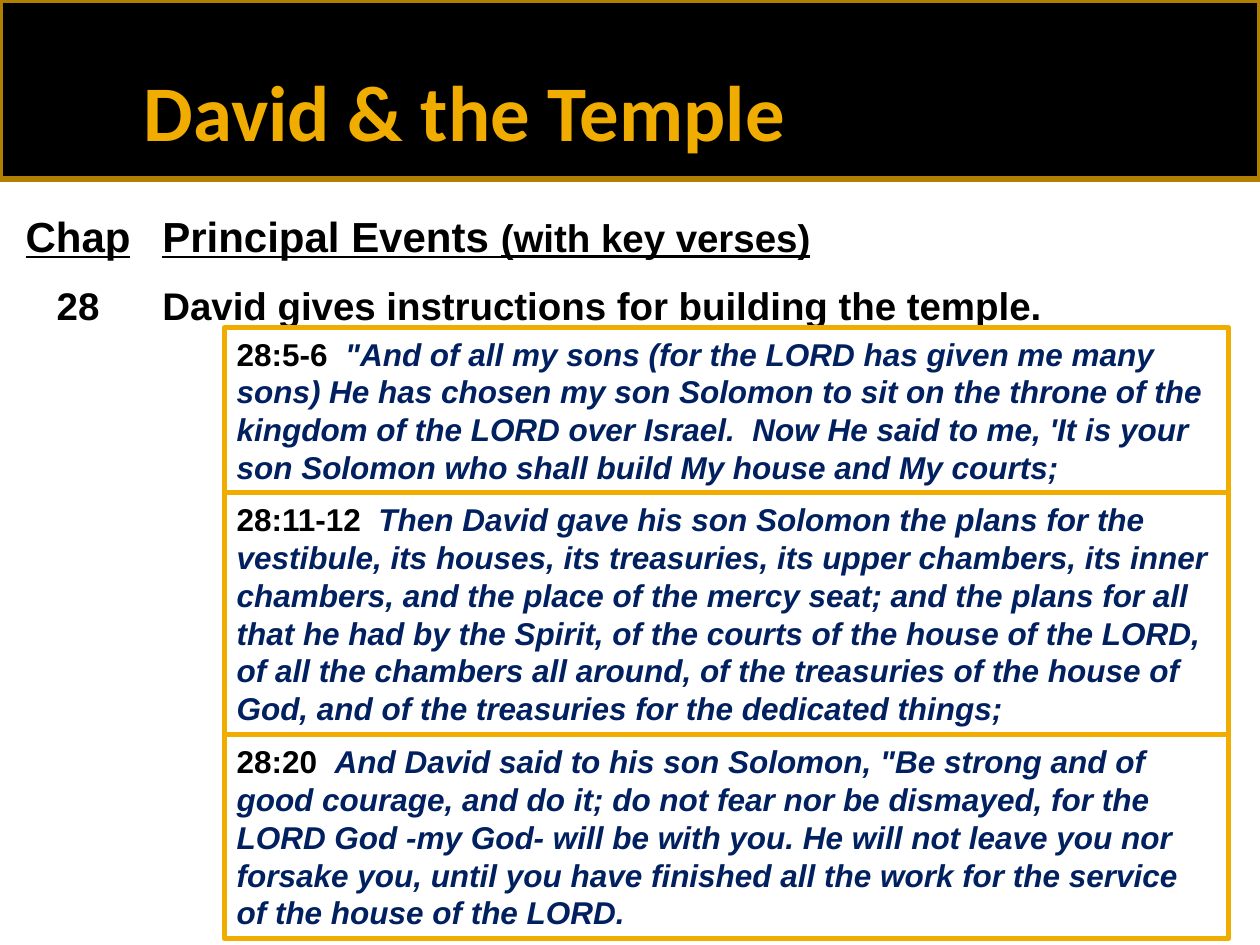
from pptx import Presentation
from pptx.dml.color import RGBColor
from pptx.enum.shapes import MSO_SHAPE
from pptx.enum.text import MSO_ANCHOR, MSO_AUTO_SIZE, PP_ALIGN
from pptx.util import Inches, Pt

COLORS = {"black": "000000", "gold": "F0AD00", "bronze": "B28000", "navy": "002060"}

TITLE = "David & the Temple"

# Each column: left, width, alignment, paragraphs of (text, size, underlined) spans
COLUMNS = [
    (0.05, 1.14, PP_ALIGN.CENTER, [
        [("Chap", 24, True)],
        [("28", 22, False)],
    ]),
    (1.19, 8.68, PP_ALIGN.LEFT, [
        [("Principal Events ", 24, True), ("(with key verses)", 22, True)],
        [("David gives instructions for building the temple.", 22, False)],
    ]),
]

# Each verse: reference, words, box height
VERSES = [
    ("28:5-6", "\"And of all my sons (for the LORD has given me many sons) He has "
     "chosen my son Solomon to sit on the throne of the kingdom of the LORD over "
     "Israel.  Now He said to me, 'It is your son Solomon who shall build My house "
     "and My courts;", 1.31),
    ("28:11-12", "Then David gave his son Solomon the plans for the vestibule, its "
     "houses, its treasuries, its upper chambers, its inner chambers, and the place "
     "of the mercy seat; and the plans for all that he had by the Spirit, of the "
     "courts of the house of the LORD, of all the chambers all around, of the "
     "treasuries of the house of God, and of the treasuries for the dedicated "
     "things;", 1.92),
    ("28:20", "And David said to his son Solomon, \"Be strong and of good courage, "
     "and do it; do not fear nor be dismayed, for the LORD God -my God- will be with "
     "you. He will not leave you nor forsake you, until you have finished all the "
     "work for the service of the house of the LORD.", 1.62),
]
VERSE_LEFT, VERSE_TOP, VERSE_WIDTH, VERSE_SIZE = 1.78, 2.6, 7.97, 18
COLUMN_TOP, COLUMN_HEIGHT = 1.62, 1.0
LINE_FACTOR = 1.2


def color(name):
    return RGBColor.from_string(COLORS[name])


def style_paragraph(para, size, font="Arial", fill="black", align=PP_ALIGN.LEFT):
    para.alignment = align
    para.font.name = font
    para.font.size = Pt(size)
    para.font.bold = True
    para.font.color.rgb = color(fill)


def add_frame(page, left, top, width, height, line, weight):
    box = page.shapes.add_shape(MSO_SHAPE.RECTANGLE, Inches(left), Inches(top),
                                Inches(width), Inches(height))
    box.shadow.inherit = False
    box.fill.background()
    box.line.color.rgb = color(line)
    box.line.width = Pt(weight)
    return box


def add_banner(page):
    banner = add_frame(page, 0, 0, 10, 1.42, "bronze", 3.75)
    banner.fill.solid()
    banner.fill.fore_color.rgb = color("black")

    title = page.shapes.title
    title.left, title.top = Inches(1.04), Inches(0.45)
    title.width, title.height = Inches(6.24), Inches(0.85)
    frame = title.text_frame
    frame.text = TITLE
    frame.auto_size = MSO_AUTO_SIZE.NONE
    frame.vertical_anchor = MSO_ANCHOR.TOP
    style_paragraph(frame.paragraphs[0], 45, "Calibri", "gold")
    banner.element.addnext(title.element)  # title in front of the banner


def add_column(page, left, width, align, paragraphs):
    box = page.shapes.add_textbox(Inches(left), Inches(COLUMN_TOP),
                                  Inches(width), Inches(COLUMN_HEIGHT))
    frame = box.text_frame
    frame.word_wrap = True
    for index, spans in enumerate(paragraphs):
        para = frame.add_paragraph() if index else frame.paragraphs[0]
        size = spans[0][1]
        style_paragraph(para, size, align=align)
        para.line_spacing = Pt(size * LINE_FACTOR)
        para.space_before = Pt(12 if index else 0)
        for text, span_size, underlined in spans:
            span = para.add_run()
            span.text = text
            span.font.size = Pt(span_size)
            span.font.underline = underlined


def add_verse(page, top, reference, words, height):
    box = add_frame(page, VERSE_LEFT, top, VERSE_WIDTH, height, "gold", 2.75)
    frame = box.text_frame
    frame.word_wrap = True
    frame.vertical_anchor = MSO_ANCHOR.MIDDLE
    para = frame.paragraphs[0]
    style_paragraph(para, VERSE_SIZE)
    para.line_spacing = Pt(VERSE_SIZE * LINE_FACTOR)
    for text, fill, italic in ((reference + "  ", "black", False), (words, "navy", True)):
        span = para.add_run()
        span.text = text
        span.font.color.rgb = color(fill)
        span.font.italic = italic


def main():
    deck = Presentation()
    deck.slide_width, deck.slide_height = Inches(10), Inches(7.5)
    page = deck.slides.add_slide(deck.slide_layouts[5])
    add_banner(page)
    for column in COLUMNS:
        add_column(page, *column)
    top = VERSE_TOP
    for reference, words, height in VERSES:
        add_verse(page, top, reference, words, height)
        top += height
    deck.save("out.pptx")


if __name__ == "__main__":
    main()
